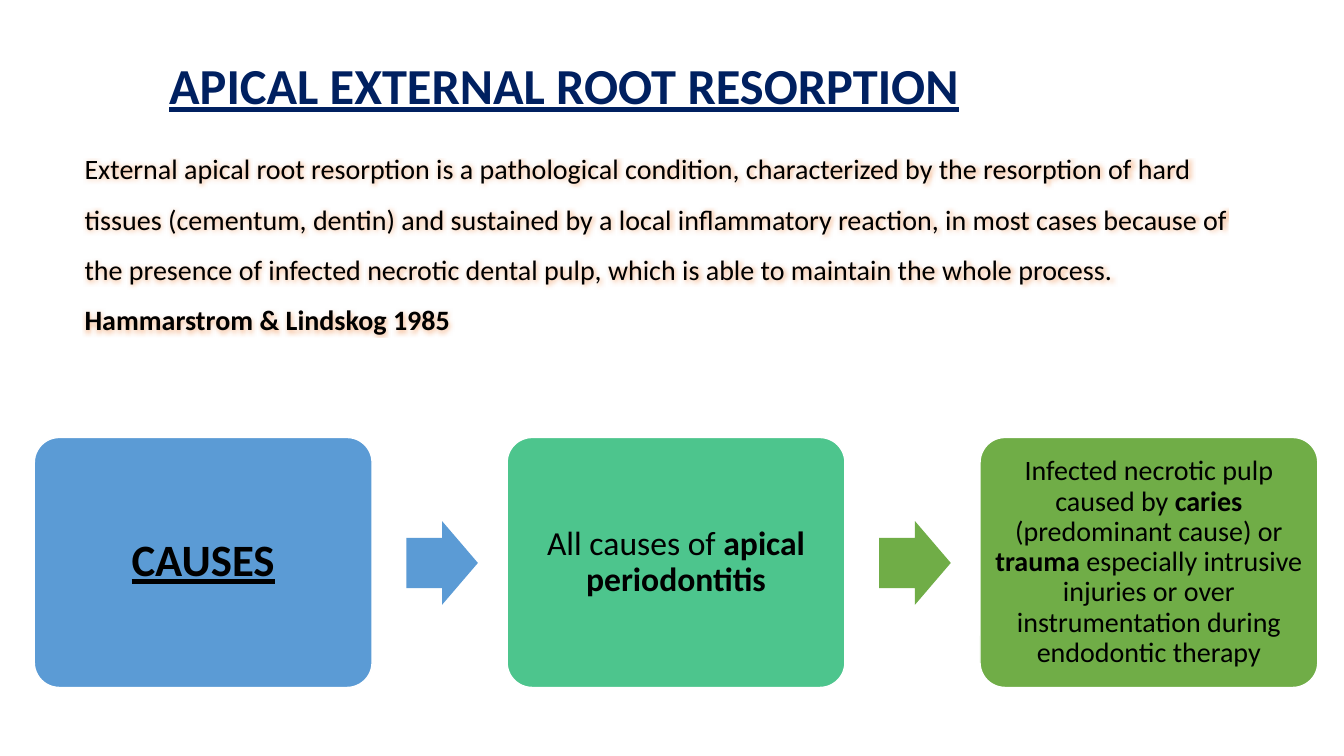
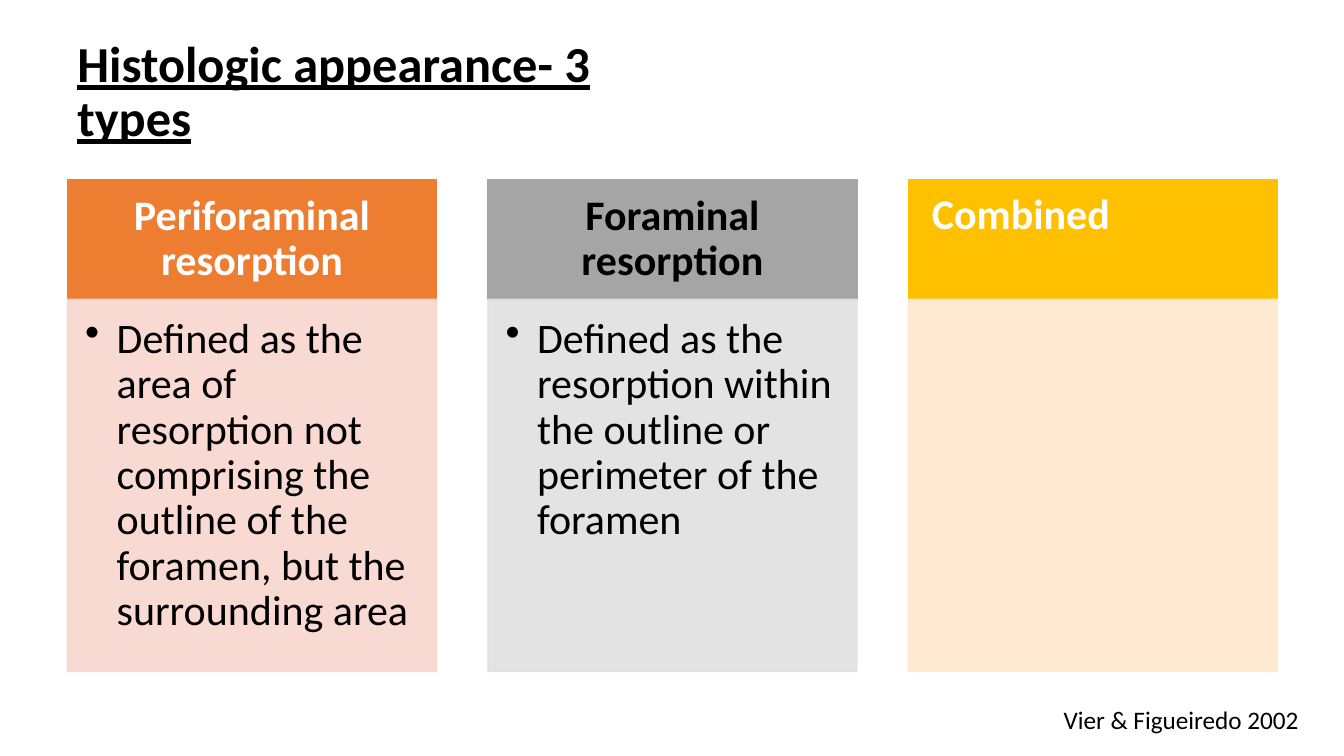
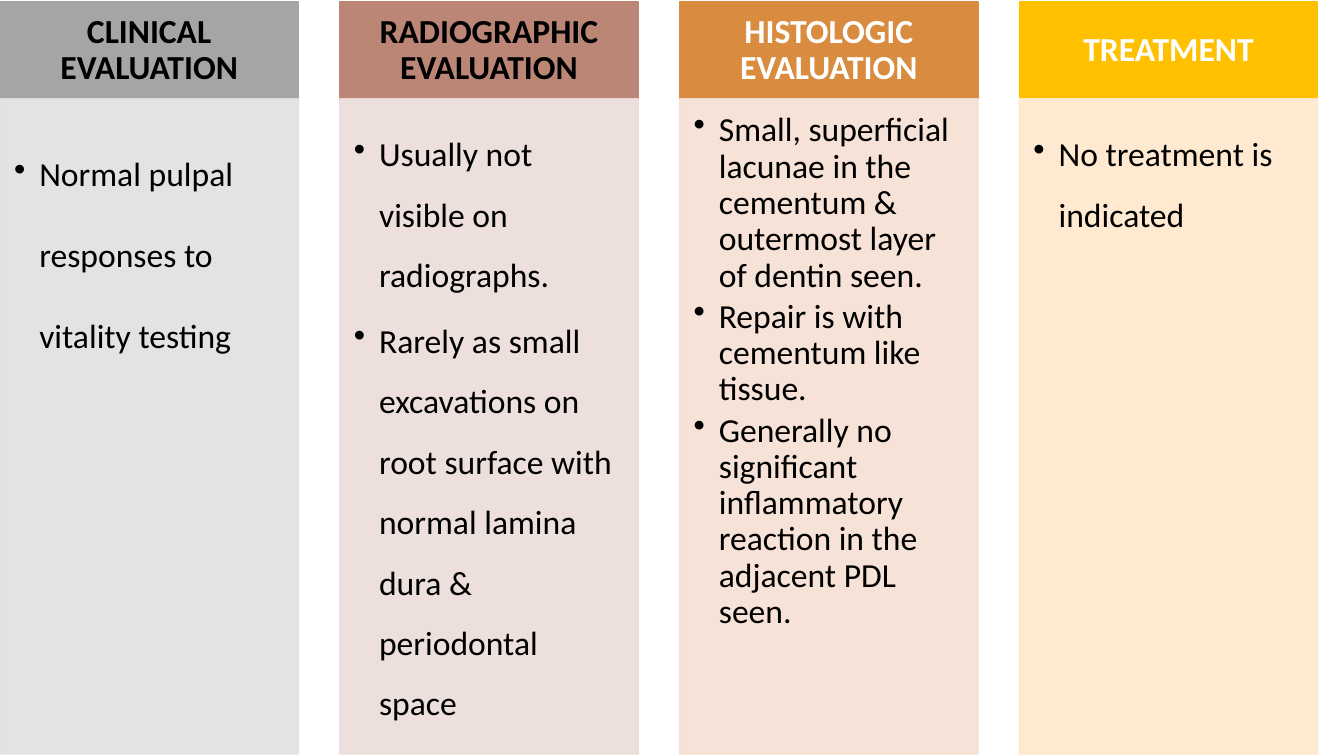
from lxml import etree
from pptx import Presentation
from pptx.dml.color import RGBColor
from pptx.enum.shapes import MSO_SHAPE
from pptx.enum.text import MSO_ANCHOR, PP_ALIGN
from pptx.oxml.ns import qn
from pptx.util import Inches, Pt

RECT, ROUND, ARROW = MSO_SHAPE.RECTANGLE, MSO_SHAPE.ROUNDED_RECTANGLE, MSO_SHAPE.RIGHT_ARROW
TOP, MIDDLE = MSO_ANCHOR.TOP, MSO_ANCHOR.MIDDLE
LEFT, CENTER, RIGHT = PP_ALIGN.LEFT, PP_ALIGN.CENTER, PP_ALIGN.RIGHT

FONT = "Calibri"
BLACK, WHITE, NAVY = "000000", "FFFFFF", "002060"
BLUE, TEAL, GREEN = "5B9BD5", "4DC58D", "70AD47"
ORANGE, GRAY, GOLD = "ED7D31", "A5A5A5", "FFC000"
PALE_GRAY, PALE_GOLD = "E1E1E1", "FFE8CC"


def color(value):
    return RGBColor.from_string(value)


def add_alpha(fill_parent, percent):
    for node in fill_parent.iter(qn("a:srgbClr")):
        etree.SubElement(node, qn("a:alpha"), val=str(percent * 1000))


class Deck:
    """Holds the shared style and the current slide."""

    def __init__(self):
        self.deck = Presentation()
        self.deck.slide_width = Inches(13.33)
        self.deck.slide_height = Inches(7.5)
        self.page = None

    def new_page(self):
        self.page = self.deck.slides.add_slide(self.deck.slide_layouts[6])

    def fill_text(self, box, paras, size, ink=BLACK, align=LEFT, anchor=TOP,
                  insets=(0.1, 0.05, 0.1, 0.05), spacing=0.9, after=0, indent=0,
                  bullet=False, bold=False, underline=False, glow=None, wrap=True):
        frame = box.text_frame
        sides = ("margin_left", "margin_top", "margin_right", "margin_bottom")
        layout = dict(zip(sides, map(Inches, insets)), word_wrap=wrap, vertical_anchor=anchor)
        for name, value in layout.items():
            setattr(frame, name, value)
        for index, text in enumerate(paras):
            para = frame.add_paragraph() if index else frame.paragraphs[0]
            formats = {"alignment": align, "line_spacing": spacing, "space_after": Pt(after)}
            for name, value in formats.items():
                setattr(para, name, value)
            props = para._p.get_or_add_pPr()
            props.set("marL", str(Inches(indent)))
            props.set("indent", str(-Inches(indent) if bullet else 0))
            if bullet:
                etree.SubElement(props, qn("a:buChar"), char="•")
            for order, part in enumerate(text.split("*")):
                if part:
                    self.span(para, part, size, ink, bold or order % 2 == 1, underline, glow)

    def span(self, para, text, size, ink, bold, underline, glow):
        span = para.add_run()
        span.text = text
        formats = {"name": FONT, "size": Pt(size), "bold": bold, "underline": underline}
        for name, value in formats.items():
            setattr(span.font, name, value)
        span.font.color.rgb = color(ink)
        if glow:
            effects = etree.Element(qn("a:effectLst"))
            halo = etree.SubElement(effects, qn("a:glow"), rad=str(Pt(5)))
            etree.SubElement(halo, qn("a:srgbClr"), val=glow)
            add_alpha(halo, 40)
            span._r.get_or_add_rPr().find(qn("a:solidFill")).addnext(effects)

    def text(self, at, paras, size, **style):
        box = self.page.shapes.add_textbox(*map(Inches, at))
        self.fill_text(box, paras, size, **style)

    def title(self, at, text, ink=BLACK):
        self.text(at, [text], 36, ink=ink, anchor=MIDDLE, bold=True, underline=True)

    def shape(self, kind, at, fill, line=None, adjust=(), alpha=None):
        shape = self.page.shapes.add_shape(kind, *map(Inches, at))
        shape.shadow.inherit = False
        for index, value in enumerate(adjust):
            shape.adjustments[index] = value
        shape.fill.solid()
        shape.fill.fore_color.rgb = color(fill)
        if line:
            shape.line.color.rgb = color(line)
            shape.line.width = Pt(1)
        else:
            shape.line.fill.background()
        if alpha:
            add_alpha(shape._element.spPr, alpha)
        return shape

    def step(self, left, fill, text, size, inset, **style):
        box = self.shape(ROUND, (left, 4.34, 3.35, 2.48), fill, WHITE, [0.1])
        self.fill_text(box, [text], size, align=CENTER, anchor=MIDDLE,
                       insets=[inset] * 4, **style)

    def arrow(self, left, fill):
        self.shape(ARROW, (left, 5.17, 0.71, 0.83), fill, adjust=[0.6, 0.5])

    def column(self, at, head_height, size, heading, fill, ink, pale, points,
               spacing=0.9, align=CENTER, anchor=MIDDLE):
        left, top, width, height = at
        em = size / 72
        head = self.shape(RECT, (left, top, width, head_height), fill, fill)
        self.fill_text(head, [heading], size, ink=ink, align=align, anchor=anchor, bold=True,
                       insets=[em * part for part in (0.56, 0.32, 0.56, 0.32)])
        body_at = (left, top + head_height, width, height - head_height)
        body = self.shape(RECT, body_at, pale, pale, alpha=90)
        if points:
            self.fill_text(body, points, size, spacing=spacing, after=size * 0.15,
                           indent=em * 0.75, bullet=True,
                           insets=[em * part for part in (0.42, 0.42, 0.56, 0.63)])


def apical_resorption(deck):
    deck.new_page()
    deck.title((1.58, 0.5, 10.17, 0.75), "APICAL EXTERNAL ROOT RESORPTION", NAVY)
    deck.text((0.67, 1.29, 12, 2.63), [
        "External apical root resorption is a pathological condition, characterized by the "
        "resorption of hard tissues (cementum, dentin) and sustained by a local inflammatory "
        "reaction, in most cases because of the presence of infected necrotic dental pulp, "
        "which is able to maintain the whole process.",
        "*Hammarstrom & Lindskog 1985*",
    ], 20, spacing=1.5, indent=0.07, glow=ORANGE)
    first, pitch = 0.34, 4.69
    deck.step(first, BLUE, "CAUSES", 32, 0.13, bold=True, underline=True)
    deck.step(first + pitch, TEAL, "All causes of *apical periodontitis*", 24, 0.1)
    deck.step(first + 2 * pitch, GREEN,
              "Infected necrotic pulp caused by *caries* (predominant cause) or *trauma* "
              "especially intrusive injuries or over instrumentation during endodontic therapy",
              20, 0.08)
    for index, fill in enumerate((BLUE, GREEN)):
        deck.arrow(4.03 + index * pitch, fill)


def histologic_types(deck):
    deck.new_page()
    deck.title((0.67, 0.3, 5.83, 1.25), "Histologic appearance- 3 types")
    columns = [
        ("Periforaminal resorption", ORANGE, WHITE, "F8D7CE",
         ["Defined as the area of resorption not comprising the outline of the foramen, "
          "but the surrounding area"], {}),
        ("Foraminal resorption", GRAY, BLACK, PALE_GRAY,
         ["Defined as the resorption within the outline or perimeter of the foramen"], {}),
        ("Combined", GOLD, WHITE, PALE_GOLD, [], {"align": LEFT, "anchor": TOP}),
    ]
    for index, (*content, style) in enumerate(columns):
        deck.column((0.67 + index * 4.17, 1.78, 3.66, 4.88), 1.19, 30, *content, **style)
    deck.text((10.42, 6.94, 2.56, 0.4), ["Vier & Figueiredo 2002"], 18,
              align=RIGHT, spacing=1.0, wrap=False)


def evaluation(deck):
    deck.new_page()
    columns = [
        ("CLINICAL EVALUATION", GRAY, BLACK, PALE_GRAY,
         ["Normal pulpal responses to vitality testing"], 2.0),
        ("RADIOGRAPHIC EVALUATION", "BB8676", BLACK, "EBDCD9",
         ["Usually not visible on radiographs.",
          "Rarely as small excavations on root surface with normal lamina dura & "
          "periodontal space"], 1.5),
        ("HISTOLOGIC EVALUATION", "D98B3F", WHITE, "F6DFD2",
         ["Small, superficial lacunae in the cementum & outermost layer of dentin seen.",
          "Repair is with cementum like tissue.",
          "Generally no significant inflammatory reaction in the adjacent PDL seen."], 0.9),
        ("TREATMENT", GOLD, WHITE, PALE_GOLD, ["No treatment is indicated"], 1.5),
    ]
    for index, content in enumerate(columns):
        deck.column((index * 3.37, 0.02, 2.96, 7.46), 0.96, 24, *content)


def main():
    deck = Deck()
    for build in (apical_resorption, histologic_types, evaluation):
        build(deck)
    deck.deck.save("out.pptx")


if __name__ == "__main__":
    main()
